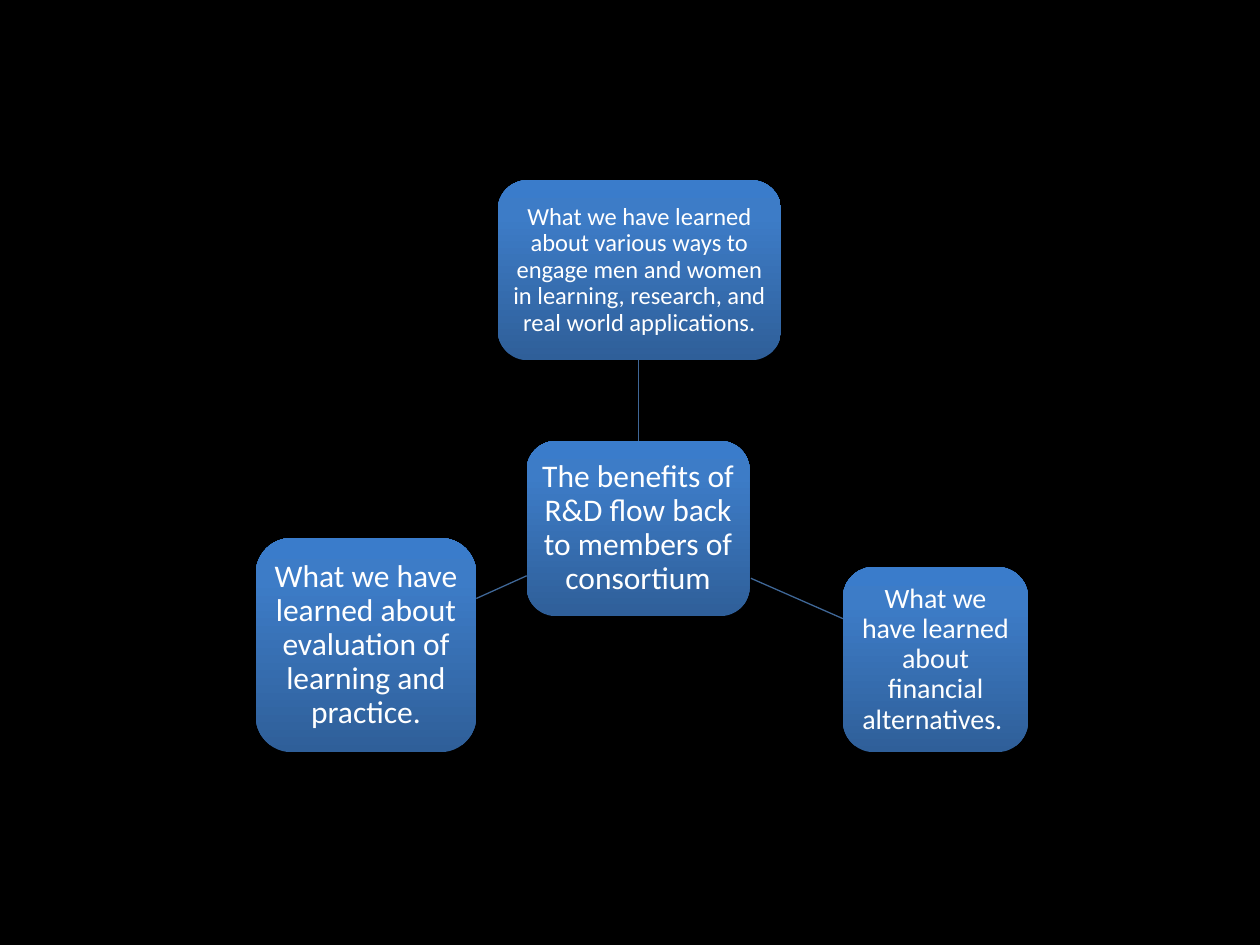
from copy import deepcopy
from dataclasses import dataclass

from lxml import etree
from pptx import Presentation
from pptx import util as u
from pptx.dml.color import RGBColor
from pptx.enum import shapes, text
from pptx.oxml.ns import qn
from pptx.shapes.autoshape import Shape
from pptx.slide import Slide


@dataclass(frozen=True)
class Theme:
    background: str = "000000"
    text: str = "FFFFFF"
    link: str = "3F6797"
    gradient: tuple = ((0, "2F5F99"), (0.8, "3D7CC7"), (1, "3A7CCB"))
    font: str = "Calibri"
    large: int = 18
    medium: int = 16
    small: int = 14
    line_width: float = 0.75


@dataclass(frozen=True)
class Node:
    label: str
    left: float
    top: float
    width: float
    height: float
    size: int
    inset: float


@dataclass(frozen=True)
class Link:
    start: tuple[float, float]
    end: tuple[float, float]


THEME = Theme()

NODES = (
    Node("The benefits of R&D flow back to members of consortium",
         4.18, 3.5, 1.77, 1.39, THEME.large, 0.05),
    Node("What we have learned about various ways to engage men and women "
         "in learning, research, and real world applications.",
         3.95, 1.43, 2.25, 1.43, THEME.small, 0.04),
    Node("What we have learned about financial alternatives. ",
         6.69, 4.5, 1.47, 1.47, THEME.medium, 0.04),
    Node("What we have learned about evaluation of learning and practice.",
         2.03, 4.27, 1.75, 1.7, THEME.large, 0.05),
)

# Each link runs from the edge of the centre node to an outer node
LINKS = (
    Link((5.07, 3.5), (5.07, 2.86)),
    Link((5.96, 4.59), (6.69, 4.91)),
    Link((4.18, 4.57), (3.78, 4.75)),
)


def fill_gradient(shape: Shape) -> None:
    """Fill from the bottom upwards with the stops of the theme."""
    shape.fill.gradient()
    shape.fill.gradient_angle = 90
    stop_list = shape.fill._xPr.find(".//" + qn("a:gsLst"))
    stop_list.insert(1, deepcopy(stop_list[0]))
    for stop, (position, color) in zip(shape.fill.gradient_stops, THEME.gradient):
        stop.position = position
        stop.color.rgb = RGBColor.from_string(color)


def draw_node(slide: Slide, node: Node) -> None:
    shape = slide.shapes.add_shape(
        shapes.MSO_SHAPE.ROUNDED_RECTANGLE,
        u.Inches(node.left), u.Inches(node.top),
        u.Inches(node.width), u.Inches(node.height))
    shape.shadow.inherit = False
    shape.line.fill.background()
    fill_gradient(shape)

    frame = shape.text_frame
    frame.word_wrap = True
    frame.vertical_anchor = text.MSO_ANCHOR.MIDDLE
    frame.margin_left = frame.margin_right = u.Inches(node.inset)
    frame.margin_top = frame.margin_bottom = u.Inches(node.inset)
    frame.text = node.label
    paragraph = frame.paragraphs[0]
    paragraph.alignment = text.PP_ALIGN.CENTER
    paragraph.line_spacing = 0.9
    font = paragraph.runs[0].font
    font.name = THEME.font
    font.size = u.Pt(node.size)
    font.color.rgb = RGBColor.from_string(THEME.text)


def draw_link(slide: Slide, link: Link) -> None:
    points = [u.Inches(value) for value in (*link.start, *link.end)]
    connector = slide.shapes.add_connector(shapes.MSO_CONNECTOR.STRAIGHT, *points)
    connector.line.color.rgb = RGBColor.from_string(THEME.link)
    connector.line.width = u.Pt(THEME.line_width)
    etree.SubElement(connector._element.spPr, qn("a:effectLst"))


def main() -> None:
    presentation = Presentation()
    presentation.slide_width = u.Inches(10)
    presentation.slide_height = u.Inches(7.5)

    # Blank layout, as the slide has no title
    slide = presentation.slides.add_slide(presentation.slide_layouts[6])
    slide.background.fill.solid()
    slide.background.fill.fore_color.rgb = RGBColor.from_string(THEME.background)

    # Diagram
    for link in LINKS:
        draw_link(slide, link)
    for node in NODES:
        draw_node(slide, node)

    presentation.save("out.pptx")


if __name__ == "__main__":
    main()
